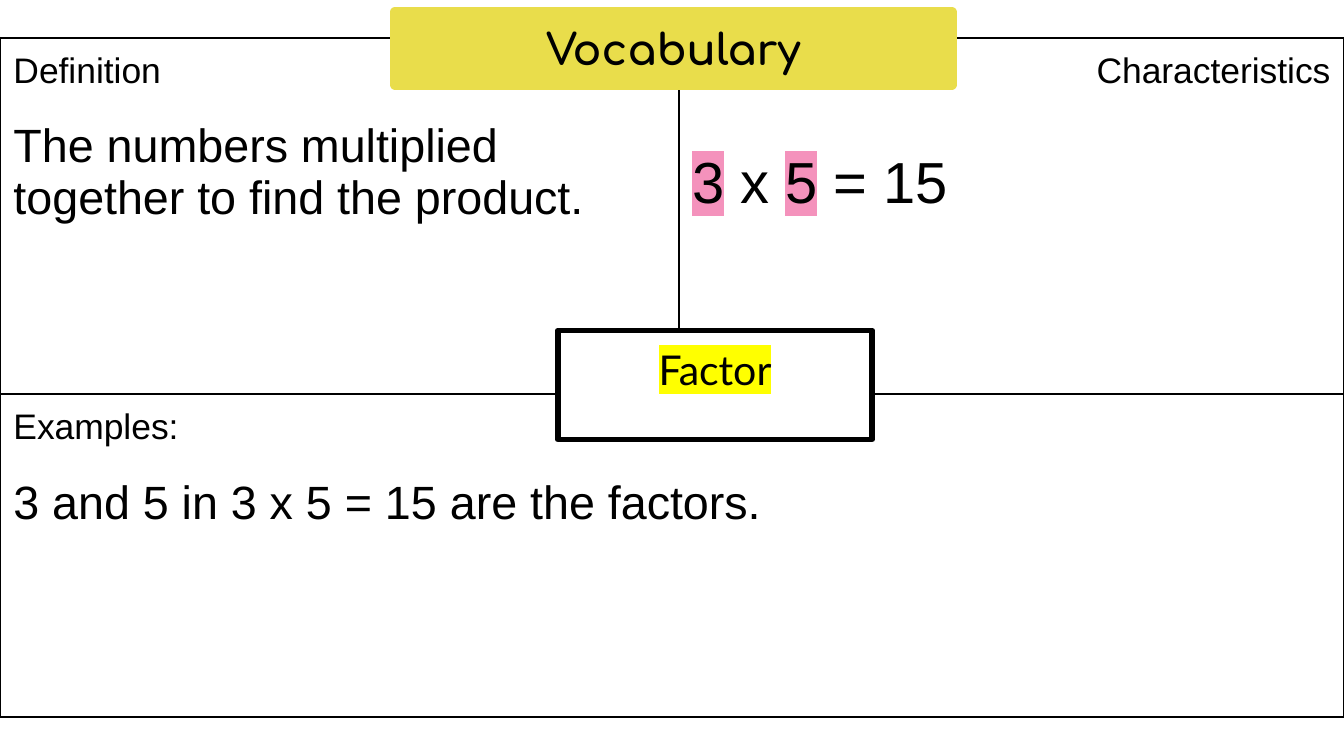
from lxml import etree
from pptx import Presentation
from pptx.dml.color import RGBColor
from pptx.enum import shapes, text
from pptx.oxml import ns
from pptx.util import Pt


def color(value):
    return RGBColor.from_string(value)


def add_span(para, words, size, font="Arial", highlight=None, bold=False):
    span = para.add_run()
    span.text = words
    span.font.size = Pt(size)
    span.font.bold = bold
    span.font.color.rgb = color("000000")
    if highlight:
        # The highlight has to stand between the fill and the typeface
        mark = etree.SubElement(span.font._element, ns.qn("a:highlight"))
        etree.SubElement(mark, ns.qn("a:srgbClr"), val=highlight)
    span.font.name = font


deck = Presentation()
deck.slide_width, deck.slide_height = Pt(720), Pt(405)
page = deck.slides.add_slide(deck.slide_layouts[5])

# Vocabulary grid: two cells above one wide cell
grid = page.shapes.add_table(2, 2, Pt(0), Pt(20.4), Pt(720), Pt(363.6)).table
grid.first_row = grid.horz_banding = False
for column, width in zip(grid.columns, (363.6, 356.4)):
    column.width = Pt(width)
for row, height in zip(grid.rows, (190.8, 172.8)):
    row.height = Pt(height)
grid.cell(1, 0).merge(grid.cell(1, 1))

# White cells with thin black borders
for cell in grid.iter_cells():
    cell.fill.solid()
    cell.fill.fore_color.rgb = color("FFFFFF")
    cell.margin_left = cell.margin_right = Pt(7.2)
    cell.margin_top = cell.margin_bottom = Pt(7.2)
    properties = cell._tc.get_or_add_tcPr()
    for index, side in enumerate(("lnL", "lnR", "lnT", "lnB")):
        border = etree.Element(ns.qn(f"a:{side}"), w=str(Pt(1.5)))
        fill = etree.SubElement(border, ns.qn("a:solidFill"))
        etree.SubElement(fill, ns.qn("a:srgbClr"), val="000000")
        properties.insert(index, border)

# Heading, alignment, gap below, body size and body spans of each cell
left, right = text.PP_ALIGN.LEFT, text.PP_ALIGN.RIGHT
pink = "F492BC"
entries = [
    (0, 0, "Definition", left, 16, 25,
     [("The numbers multiplied together to find the product.", None)]),
    (0, 1, "Characteristics", right, 32, 31,
     [("3", pink), (" x ", None), ("5", pink), (" = 15", None)]),
    (1, 0, "Examples:", left, 16, 25,
     [("3 and 5 in 3 x 5 = 15 are the factors.", None)]),
]
for row, column, heading, align, gap, size, spans in entries:
    frame = grid.cell(row, column).text_frame
    para = frame.paragraphs[0]
    para.alignment = align
    para.space_after = Pt(gap)
    add_span(para, heading, 19)
    body = frame.add_paragraph()
    for words, highlight in spans:
        add_span(body, words, size, highlight=highlight)

# Word box and title banner, both in front of the grid
word_box = page.shapes.add_shape(shapes.MSO_SHAPE.RECTANGLE, 0, 0, 0, 0)
word_box.shadow.inherit = False
banner = page.shapes.title
banner.element.getparent().append(banner.element)

top, middle = text.MSO_ANCHOR.TOP, text.MSO_ANCHOR.MIDDLE
labels = [
    (word_box, (298.8, 177.1, 168.5, 58.3), "FFFFFF", "000000", 3, 7.2, top,
     ("Factor", 22, "Lato", "FFFF00", False)),
    (banner, (211.7, 6.5, 298.1, 38.9), "E9DD4B", "E9DD4B", 6, 5, middle,
     ("Vocabulary", 23, "Comfortaa", None, True)),
]
for box, place, fill, line, weight, margin, anchor, label in labels:
    box.left, box.top, box.width, box.height = map(Pt, place)
    box.fill.solid()
    box.fill.fore_color.rgb = color(fill)
    box.line.color.rgb = color(line)
    box.line.width = Pt(weight)
    etree.SubElement(box.line._get_or_add_ln(), ns.qn("a:round"))
    frame = box.text_frame
    frame.auto_size = text.MSO_AUTO_SIZE.NONE
    frame.word_wrap = True
    frame.vertical_anchor = anchor
    frame.margin_left = frame.margin_right = Pt(margin)
    frame.margin_top = frame.margin_bottom = Pt(margin)
    para = frame.paragraphs[0]
    para.alignment = text.PP_ALIGN.CENTER
    add_span(para, *label)

deck.save("out.pptx")
